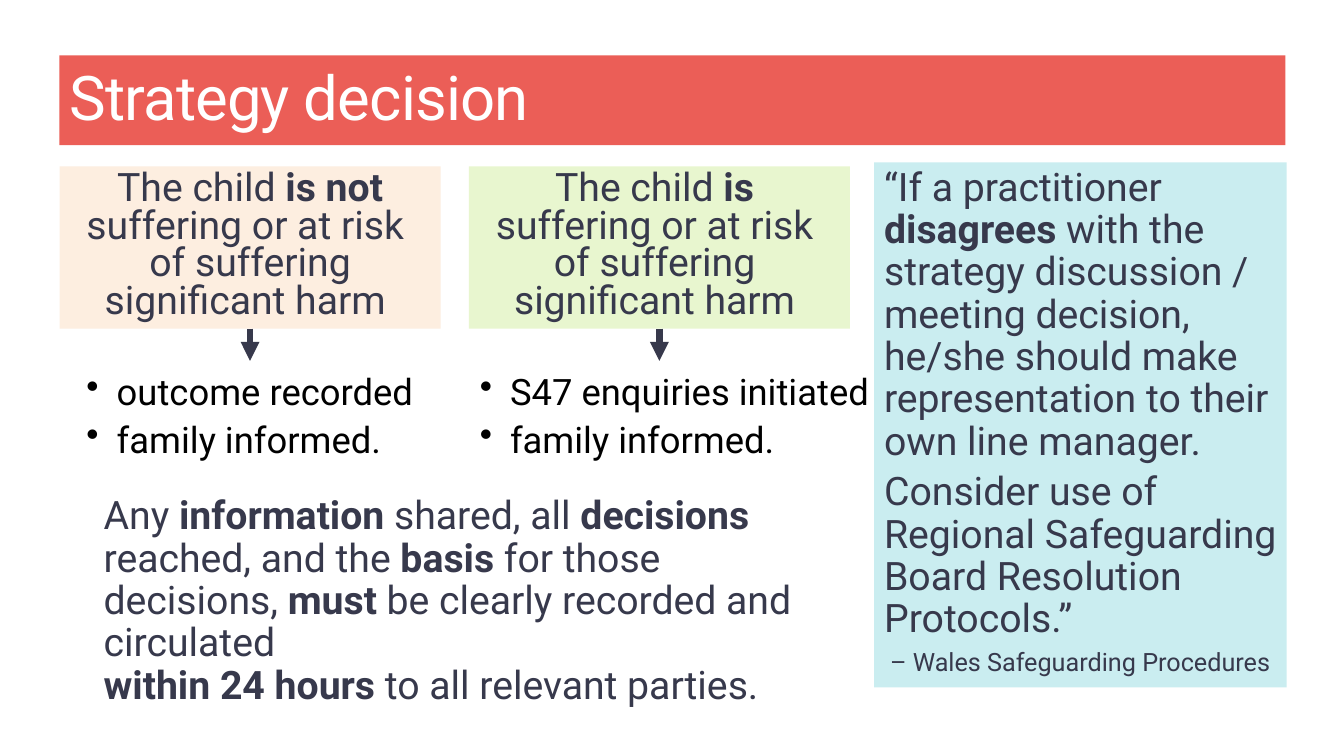
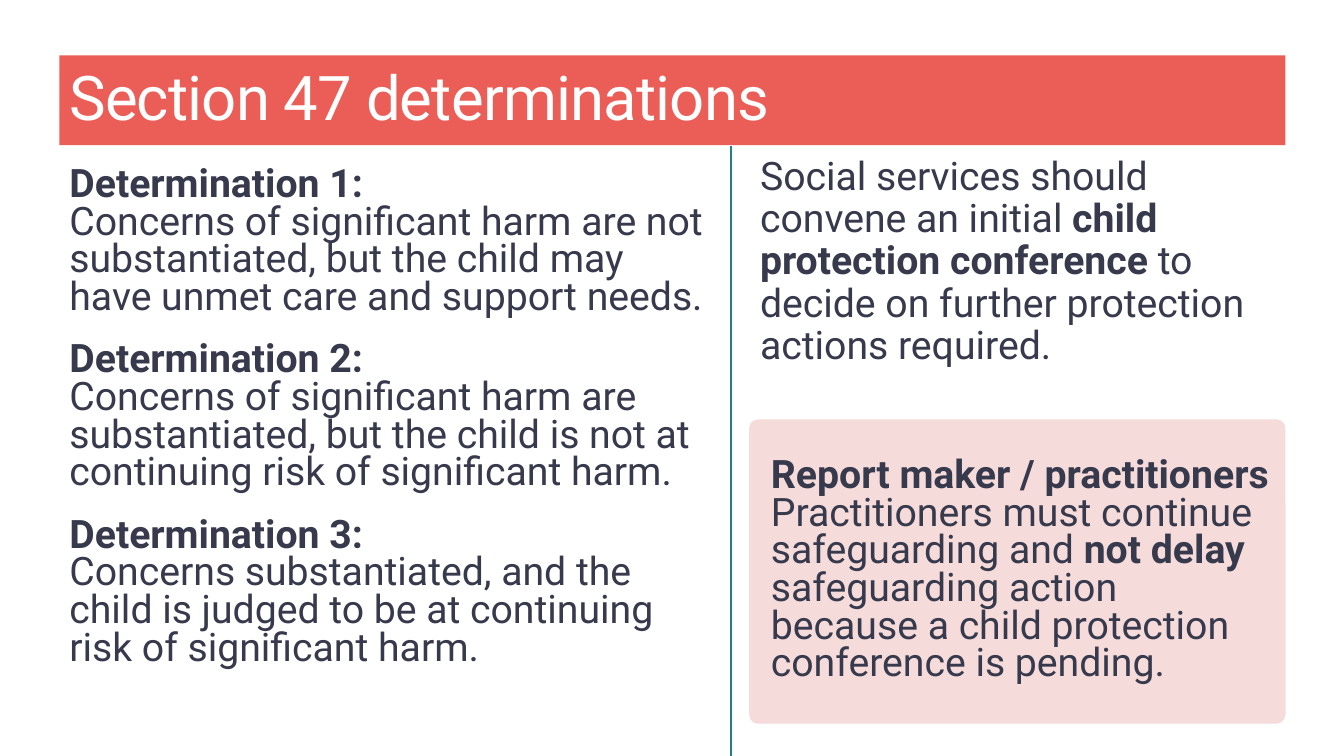
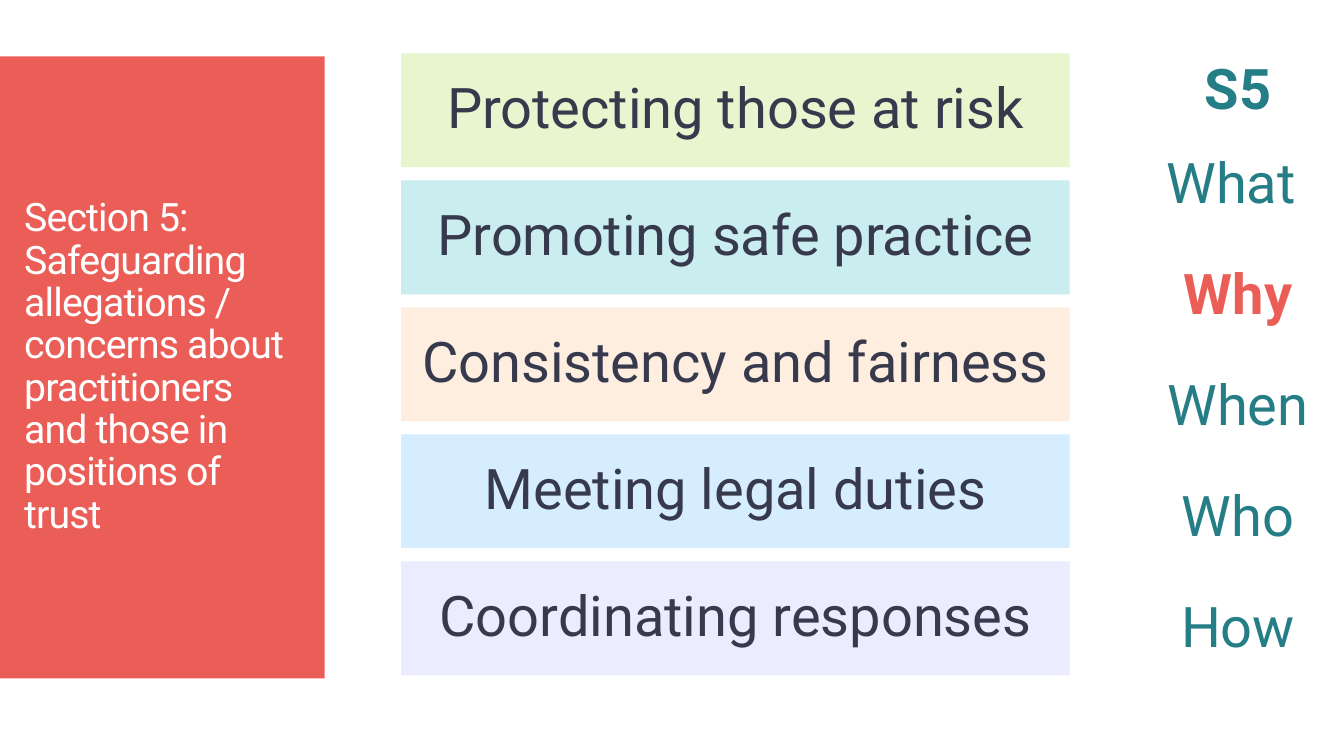
from lxml import etree
from pptx import Presentation, util as u
from pptx.dml.color import RGBColor
from pptx.enum import shapes, text
from pptx.oxml import ns

PX = 9144  # EMU per px, 100 px to the inch
FONT = "Roboto"

CORAL = RGBColor(0xEB, 0x5E, 0x57)
INK = RGBColor(0x37, 0x39, 0x4C)
TEAL = RGBColor(0x25, 0x7D, 0x86)
WHITE = RGBColor(0xFF, 0xFF, 0xFF)
BLACK = RGBColor(0, 0, 0)
PEACH = RGBColor(0xFD, 0xEE, 0xE0)
LIME = RGBColor(0xE8, 0xF6, 0xCF)
AQUA = RGBColor(0xCA, 0xED, 0xF0)
SKY = RGBColor(0xD5, 0xED, 0xFF)
LILAC = RGBColor(0xEC, 0xEC, 0xFF)
ROSE = RGBColor(0xF5, 0xDB, 0xDA)

CENTER, RIGHT = text.PP_ALIGN.CENTER, text.PP_ALIGN.RIGHT
RECT = shapes.MSO_SHAPE.RECTANGLE
ROUNDED = shapes.MSO_SHAPE.ROUNDED_RECTANGLE

# Content: **...** is bold, \n is a line break;
# a paragraph is a string or (string, format overrides)
TITLE_BAND = (59, 55, 1216, 89)

# (left of box, left of list, width of list, fill, finding, outcomes)
FINDINGS = [
    (59, 76, 390, PEACH,
     "The child **is not** suffering or at risk \nof suffering significant harm ",
     ["outcome recorded", "family informed."]),
    (465, 466, 409, LIME,
     "The child **is **\nsuffering or at risk \nof suffering \nsignificant harm ",
     ["S47 enquiries initiated", "family informed."]),
]
RECORDING = ("Any **information** shared, all **decisions** reached, and the "
             "**basis** for those decisions, **must** be clearly recorded and "
             "circulated\n**within 24 hours** to all relevant parties.")
DISAGREEMENT = [
    "“If a practitioner **disagrees** with the strategy discussion / meeting "
    "decision, he/she should make representation to their own line manager.",
    "Consider use of Regional Safeguarding Board Resolution Protocols.”",
    ("– Wales Safeguarding Procedures ", dict(size=18, align=RIGHT)),
]

DETERMINATIONS = [
    "Concerns of significant harm are not substantiated, but the child may "
    "have unmet care and support needs.",
    "Concerns of significant harm are substantiated, but the child is not at "
    "continuing risk of significant harm.",
    "Concerns substantiated, and the child is judged to be at continuing risk "
    "of significant harm.",
]
CONFERENCE = ("Social services should convene an initial **child protection "
              "conference **to decide on further protection actions required.")
PRACTITIONERS = ("**Report maker / practitioners**\nPractitioners must continue "
                 "safeguarding and **not delay **safeguarding action because a "
                 "child protection conference is pending.")

SECTION = ("Section 5:\nSafeguarding allegations / concerns about practitioners "
           "and those in positions of trust")
REASONS = [
    ("Protecting those at risk", LIME),
    ("Promoting safe practice", AQUA),
    ("Consistency and fairness", PEACH),
    ("Meeting legal duties", SKY),
    ("Coordinating responses", LILAC),
]
QUESTIONS = [
    ("**S5**", dict(after=12)),
    "What ",
    ("**Why**", dict(color=CORAL)),
    "When",
    "Who",
    "How",
]


def add_paragraph(p, words, size=28, color=INK, align=None, line=0.9,
                  before=0, after=0, bullet=False, tracking=0):
    p.line_spacing = line
    p.space_before, p.space_after = u.Pt(before), u.Pt(after)
    if align is not None:
        p.alignment = align
    if bullet:
        props = p._p.get_or_add_pPr()
        props.set("marL", str(30 * PX))
        props.set("indent", str(-30 * PX))
        etree.SubElement(props, ns.qn("a:buChar")).set("char", "•")
    for i, part in enumerate(words.split("**")):
        for j, piece in enumerate(part.split("\n")):
            if j:
                p.add_line_break()
            if piece:
                run = p.add_run()
                run.text = piece
                run.font.name, run.font.size = FONT, u.Pt(size)
                run.font.bold = i % 2 == 1
                run.font.color.rgb = color
                if tracking:
                    run.font._element.set("spc", str(tracking))


def add_text(slide, box, paragraphs, fill=None, shape=RECT, radius=None,
             middle=False, inset=(10, 5, 10, 5), before=0, **style):
    """Text in a plain box, or in a filled shape when a fill is given."""
    place = [v * PX for v in box]
    if fill is None:
        holder = slide.shapes.add_textbox(*place)
    else:
        holder = slide.shapes.add_shape(shape, *place)
        holder.shadow.inherit = False
        holder.fill.solid()
        holder.fill.fore_color.rgb = fill
        holder.line.fill.background()
        if radius is not None:
            holder.adjustments[0] = radius
    frame = holder.text_frame
    frame.word_wrap = True
    frame.vertical_anchor = (text.MSO_ANCHOR.MIDDLE if middle
                             else text.MSO_ANCHOR.TOP)
    (frame.margin_left, frame.margin_top,
     frame.margin_right, frame.margin_bottom) = [v * PX for v in inset]
    if isinstance(paragraphs, str):
        paragraphs = [paragraphs]
    for i, item in enumerate(paragraphs):
        words, own = (item, {}) if isinstance(item, str) else item
        p = frame.add_paragraph() if i else frame.paragraphs[0]
        options = {"align": text.PP_ALIGN.LEFT, **style, **own}
        add_paragraph(p, words, before=before if i else 0, **options)


def add_title(slide, words, box=TITLE_BAND, size=44, **style):
    add_text(slide, box, words, fill=CORAL, middle=True, size=size,
             color=WHITE, tracking=-60, **style)


def add_line(slide, x, top, bottom, color, width, arrow=False):
    line = slide.shapes.add_connector(
        shapes.MSO_CONNECTOR.STRAIGHT, x * PX, top * PX, x * PX, bottom * PX)
    line.line.color.rgb, line.line.width = color, u.Pt(width)
    if arrow:
        outline = line.line._get_or_add_ln()
        etree.SubElement(outline, ns.qn("a:tailEnd")).set("type", "triangle")
    etree.SubElement(line._element.spPr, ns.qn("a:effectLst"))


def strategy_slide(slide):
    add_title(slide, "Strategy decision")
    top, width, height = 165, 378, 161
    for left, list_left, list_width, fill, finding, outcomes in FINDINGS:
        add_text(slide, (left, top, width, height), finding, fill=fill,
                 align=CENTER, line=0.8)
        add_line(slide, left + width // 2, top + height, 358, INK, 4.5,
                 arrow=True)
        add_text(slide, (list_left, 366, list_width, 101), outcomes, size=26,
                 color=BLACK, after=6, bullet=True)
    add_text(slide, (93, 487, 746, 180), RECORDING)
    add_text(slide, (867, 161, 409, 521), DISAGREEMENT, fill=AQUA, after=6)


def determinations_slide(slide):
    add_title(slide, "Section 47 determinations")
    for i, concern in enumerate(DETERMINATIONS):
        add_text(slide, (59, 158 + 174 * i, 648, 164),
                 f"**Determination {i + 1}:**\n{concern}",
                 line=0.8, inset=(10, 8, 10, 8))
    add_line(slide, 725, 145, 750, TEAL, 0.75)
    add_text(slide, (744, 150, 549, 222), CONFERENCE)
    add_text(slide, (743, 416, 532, 302), PRACTITIONERS, fill=ROSE,
             shape=ROUNDED, radius=0.03, middle=True, line=0.8, after=12,
             inset=(19, 5, 10, 5))


def reasons_slide(slide):
    add_title(slide, SECTION, box=(0, 56, 322, 617), size=28,
              inset=(24, 5, 24, 5))
    for i, (reason, fill) in enumerate(REASONS):
        add_text(slide, (398, 53 + 126 * i, 663, 113), reason, fill=fill,
                 middle=True, size=40, align=CENTER)
    add_text(slide, (1136, 56, 198, 614), QUESTIONS, size=40, color=TEAL,
             align=CENTER, before=12, after=24, inset=(10, 5, 24, 5))


def main():
    deck = Presentation()
    deck.slide_width, deck.slide_height = 1333 * PX, 750 * PX
    for build in (strategy_slide, determinations_slide, reasons_slide):
        build(deck.slides.add_slide(deck.slide_layouts[6]))
    deck.save("out.pptx")


if __name__ == "__main__":
    main()
